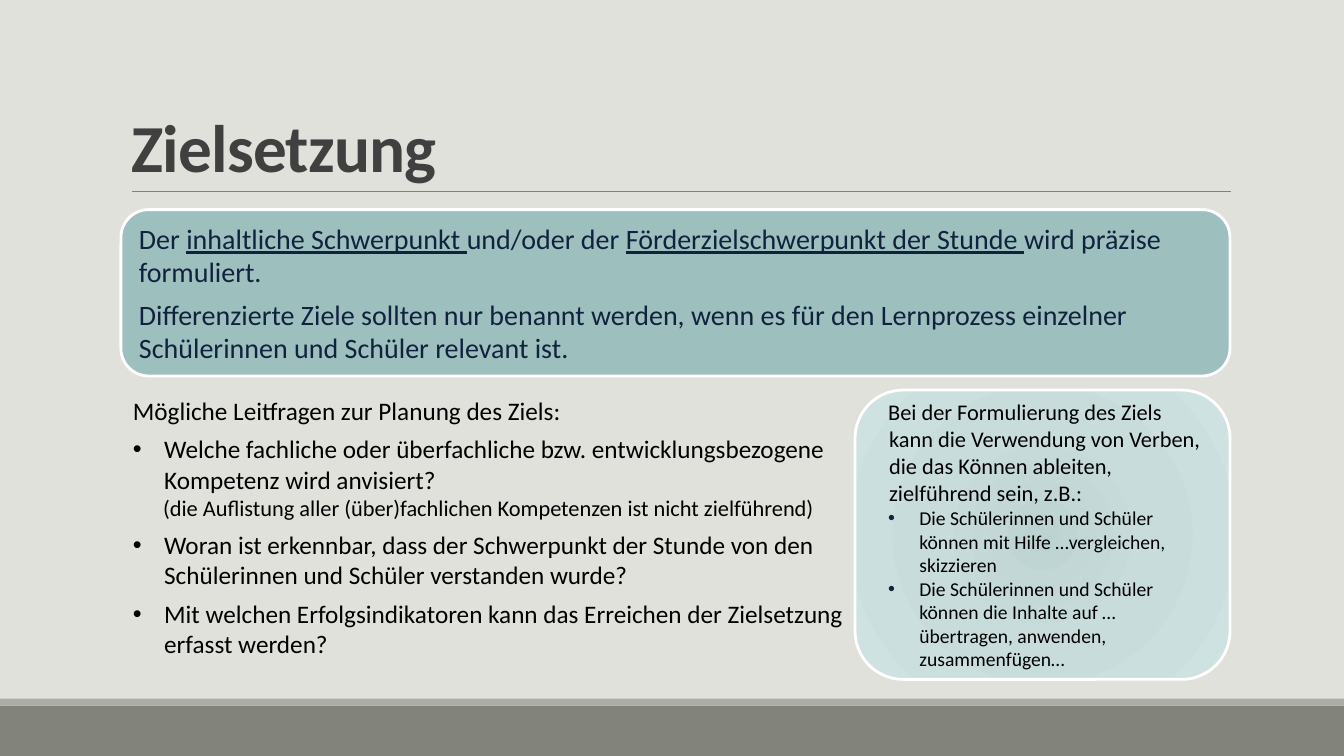
from dataclasses import dataclass
from typing import NamedTuple

from lxml import etree
from pptx import Presentation
from pptx.dml.color import RGBColor
from pptx.enum.shapes import MSO_CONNECTOR, MSO_SHAPE
from pptx.enum.text import MSO_ANCHOR, PP_ALIGN
from pptx.oxml.ns import qn
from pptx.util import Inches, Pt

RECTANGLE, ROUNDED = MSO_SHAPE.RECTANGLE, MSO_SHAPE.ROUNDED_RECTANGLE
STRAIGHT = MSO_CONNECTOR.STRAIGHT
TOP, MIDDLE, BOTTOM = MSO_ANCHOR.TOP, MSO_ANCHOR.MIDDLE, MSO_ANCHOR.BOTTOM
LEFT = PP_ALIGN.LEFT
TITLE_ONLY = 5
WIDTH, HEIGHT = Inches(13.33), Inches(7.5)


@dataclass(frozen=True)
class Theme:
    font: str = "Calibri"
    background: str = "E1E1DB"
    footer: str = "82847C"
    strip: str = "ACADA8"
    rule: str = "808080"
    title: str = "404040"
    panel: str = "9DBFBE"
    navy: str = "10223D"
    text: str = "000000"
    outline: str = "FFFFFF"
    glow: tuple = ((0, "BDD3D2"), (45, "C9DCDC"), (100, "CEE2E1"))
    title_size: int = 48
    panel_size: int = 20
    body_size: int = 18
    note_size: int = 16
    example_size: int = 14


THEME = Theme()


class Region(NamedTuple):
    left: int
    top: int
    width: int
    height: int


def region(left, top, width, height):
    """Turn percentages of the slide's size into a region."""
    return Region(int(WIDTH * left / 100), int(HEIGHT * top / 100),
                  int(WIDTH * width / 100), int(HEIGHT * height / 100))


def rgb(color):
    return RGBColor.from_string(color)


def add_span(para, text, *, size, color=THEME.text, bold=False, underline=False):
    span = para.add_run()
    span.text = text
    span.font.name = THEME.font
    span.font.size = Pt(size)
    span.font.color.rgb = rgb(color)
    span.font.bold = bold
    span.font.underline = underline
    return span


def add_bullet(para, color):
    properties = para._p.get_or_add_pPr()
    bullet_color = etree.SubElement(properties, qn("a:buClr"))
    etree.SubElement(bullet_color, qn("a:srgbClr"), val=color)
    etree.SubElement(properties, qn("a:buFont"), typeface="Arial")
    etree.SubElement(properties, qn("a:buChar"), char="•")


def add_para(frame, text, *, first=False, after=0, margin=0, hanging=0,
             bullet=None, **style):
    """Add a paragraph; every second part of a tuple of texts is underlined."""
    para = frame.paragraphs[0] if first else frame.add_paragraph()
    para.alignment = LEFT
    para.space_after = Pt(after)
    properties = para._p.get_or_add_pPr()
    properties.set("marL", str(Inches(margin)))
    properties.set("indent", str(-Inches(hanging)))
    if bullet:
        add_bullet(para, bullet)
    parts = (text,) if isinstance(text, str) else text
    for index, part in enumerate(parts):
        add_span(para, part, underline=index % 2 == 1, **style)


def add_box(page, kind, place, fill, outline=None):
    box = page.shapes.add_shape(kind, *place)
    box.shadow.inherit = False
    box.fill.solid()
    box.fill.fore_color.rgb = rgb(fill)
    if outline:
        box.line.color.rgb = rgb(outline)
        box.line.width = Pt(2)
    else:
        box.line.fill.background()
    box.text_frame.word_wrap = True
    box.text_frame.vertical_anchor = MIDDLE
    return box


def set_radial_fill(box, stops):
    solid = box._element.spPr.find(qn("a:solidFill"))
    gradient = etree.Element(qn("a:gradFill"), rotWithShape="1")
    stop_list = etree.SubElement(gradient, qn("a:gsLst"))
    for share, color in stops:
        stop = etree.SubElement(stop_list, qn("a:gs"), pos=str(share * 1000))
        etree.SubElement(stop, qn("a:srgbClr"), val=color)
    circle = etree.SubElement(gradient, qn("a:path"), path="circle")
    etree.SubElement(circle, qn("a:fillToRect"),
                     {side: "50000" for side in "ltrb"})
    solid.getparent().replace(solid, gradient)


def build_backdrop(page):
    page.background.fill.solid()
    page.background.fill.fore_color.rgb = rgb(THEME.background)
    add_box(page, RECTANGLE, region(0, 93.33, 100, 6.67), THEME.footer)
    add_box(page, RECTANGLE, region(0, 92.4, 100, 0.93), THEME.strip)


def build_title(page, place):
    title = page.shapes.title
    title.left, title.top, title.width, title.height = place
    frame = title.text_frame
    frame.word_wrap = True
    frame.vertical_anchor = BOTTOM
    para = frame.paragraphs[0]
    para.alignment = LEFT
    para.line_spacing = 0.85
    span = add_span(para, "Zielsetzung", size=THEME.title_size,
                    color=THEME.title, bold=True)
    span._r.get_or_add_rPr().set("spc", "-50")
    # Rule along the bottom of the title
    bottom = place.top + place.height
    rule = page.shapes.add_connector(
        STRAIGHT, place.left + Inches(0.11), bottom,
        place.left + place.width + Inches(0.01), bottom)
    rule.line.color.rgb = rgb(THEME.rule)
    rule.line.width = Pt(0.5)
    etree.SubElement(rule._element.spPr, qn("a:effectLst"))


def build_focus_panel(page, place):
    frame = add_box(page, ROUNDED, place, THEME.panel, THEME.outline).text_frame
    style = dict(size=THEME.panel_size, color=THEME.navy, after=6)
    add_para(frame, ("Der ", "inhaltliche Schwerpunkt ", "und/oder der ",
                     "Förderzielschwerpunkt der Stunde ",
                     "wird präzise formuliert."), first=True, **style)
    add_para(frame, "Differenzierte Ziele sollten nur benannt werden, wenn es für "
             "den Lernprozess einzelner Schülerinnen und Schüler relevant ist.",
             **style)


def build_questions(page, place):
    frame = page.shapes.add_textbox(*place).text_frame
    frame.word_wrap = True
    frame.vertical_anchor = TOP
    item = dict(size=THEME.body_size, margin=0.31, hanging=0.31,
                bullet=THEME.text)
    add_para(frame, "Mögliche Leitfragen zur Planung des Ziels:", first=True,
             size=THEME.body_size, after=6)
    add_para(frame, "Welche fachliche oder überfachliche bzw. "
             "entwicklungsbezogene Kompetenz wird anvisiert?", **item)
    add_para(frame, "(die Auflistung aller (über)fachlichen Kompetenzen ist nicht "
             "zielführend)", size=THEME.note_size, margin=0.3, after=6)
    add_para(frame, "Woran ist erkennbar, dass der Schwerpunkt der Stunde von den "
             "Schülerinnen und Schüler verstanden wurde?", after=6, **item)
    add_para(frame, "Mit welchen Erfolgsindikatoren kann das Erreichen der "
             "Zielsetzung erfasst werden?", **item)


def build_wording_panel(page, place):
    box = add_box(page, ROUNDED, place, THEME.panel, THEME.outline)
    set_radial_fill(box, THEME.glow)
    frame = box.text_frame
    item = dict(size=THEME.example_size, margin=0.4, hanging=0.31,
                bullet=THEME.navy)
    add_para(frame, "Bei der Formulierung des Ziels kann die Verwendung von Verben, "
             "die das Können ableiten, zielführend sein, z.B.:", first=True,
             size=THEME.note_size, margin=0.1, hanging=0.01)
    add_para(frame, "Die Schülerinnen und Schüler können mit Hilfe …vergleichen, "
             "skizzieren", **item)
    add_para(frame, "Die Schülerinnen und Schüler können die Inhalte auf … "
             "übertragen, anwenden, zusammenfügen…", after=6, **item)


def main():
    deck = Presentation()
    deck.slide_width, deck.slide_height = WIDTH, HEIGHT
    page = deck.slides.add_slide(deck.slide_layouts[TITLE_ONLY])
    build_backdrop(page)
    build_title(page, region(9, 4.13, 82.52, 21.2))
    build_focus_panel(page, region(9, 27.73, 82.52, 22))
    build_questions(page, region(9.15, 51.6, 54.39, 40.67))
    build_wording_panel(page, region(63.62, 51.6, 27.9, 38.27))
    deck.save("out.pptx")


if __name__ == "__main__":
    main()
